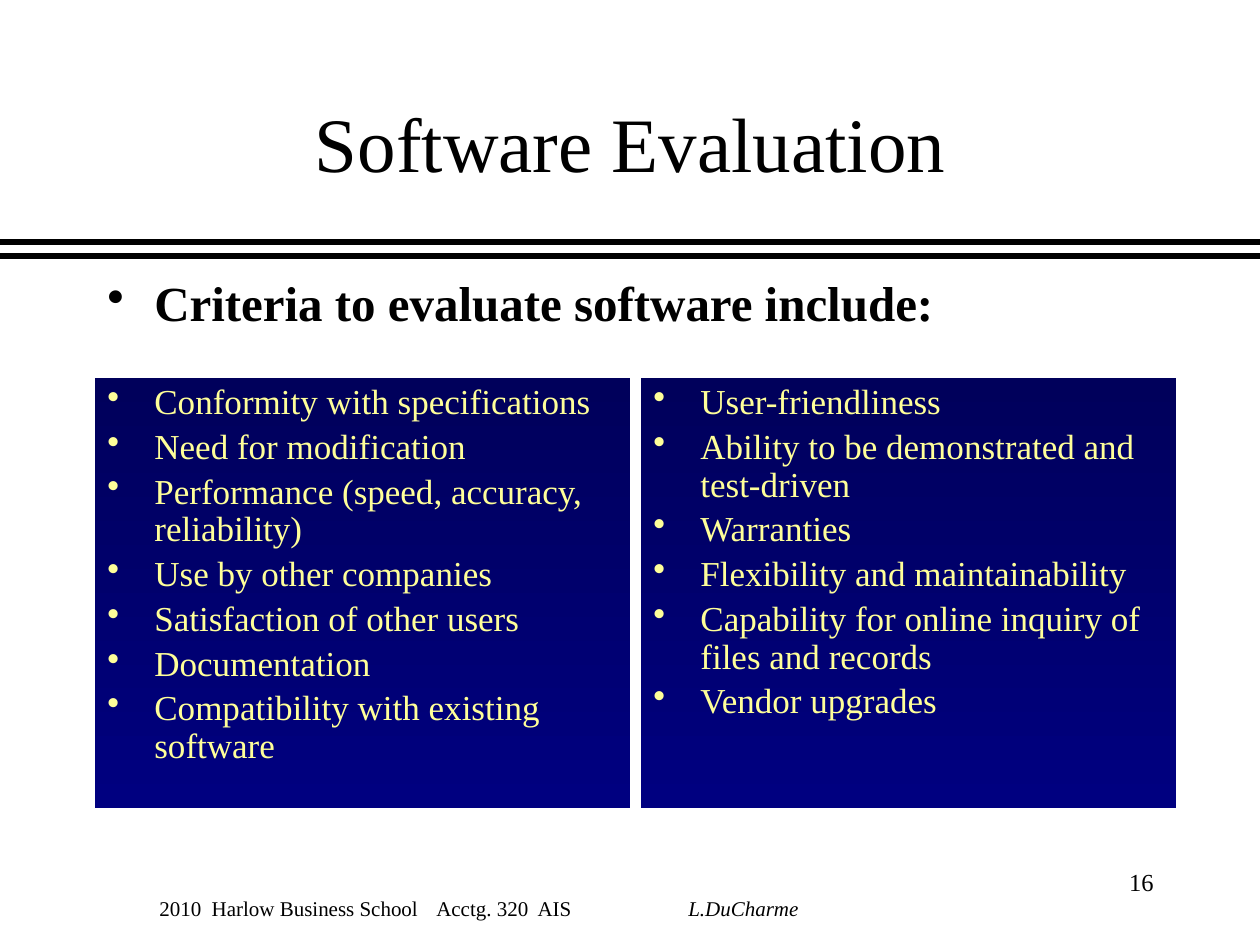
from lxml import etree
from pptx import Presentation, util as u
from pptx.dml import color
from pptx.enum import shapes, text
from pptx.oxml import ns

TITLE = "Software Evaluation"
LEAD = "Criteria to evaluate software include:"
CRITERIA = [
    [
        "Conformity with specifications",
        "Need for modification",
        "Performance (speed, accuracy, reliability)",
        "Use by other companies",
        "Satisfaction of other users",
        "Documentation",
        "Compatibility with existing software",
    ],
    [
        "User-friendliness",
        "Ability to be demonstrated and test-driven",
        "Warranties",
        "Flexibility and maintainability",
        "Capability for online inquiry of files and records",
        "Vendor upgrades",
    ],
]
FOOTER = ["2010  Harlow Business School", "Acctg. 320  AIS", "L.DuCharme"]
FOOTER_TABS = [277, 529]
PAGE_NUMBER = "16"
RULES = [(256, 3), (242, 3.5)]

COLORS = {"ink": "000000", "panel": "000080", "criteria": "FFFF99"}
FONT = "Times New Roman"
PANEL_LEFT, PANEL_TOP, PANEL_WIDTH, PANEL_HEIGHT = 95, 378, 535, 430
PANEL_STEP = 546
INDENT = 47


def px(n):
    return u.Emu(int(n * 914400 / 126))


def rgb(name):
    return color.RGBColor.from_string(COLORS[name])


def write(shape, lines, size, ink="ink", align=text.PP_ALIGN.LEFT,
          anchor=text.MSO_ANCHOR.TOP, bold=False, bullet=False):
    frame = shape.text_frame
    frame.word_wrap = True
    frame.vertical_anchor = anchor
    frame.text = "\n".join(lines)
    for line in frame.paragraphs:
        line.alignment = align
        for run in line.runs:
            run.font.name = FONT
            run.font.size = u.Pt(size)
            run.font.bold = bold
            run.font.color.rgb = rgb(ink)
        if bullet:
            line.line_spacing = 0.9
            line.space_before = u.Pt(size * 0.2)
            props = line._p.get_or_add_pPr()
            props.set("marL", str(px(INDENT)))
            props.set("indent", str(-px(INDENT)))
            etree.SubElement(props, ns.qn("a:buChar"), char="•")
    return frame


def add_text(slide, box, lines, size, **style):
    shape = slide.shapes.add_textbox(*map(px, box))
    return write(shape, lines, size, **style)


def add_rule(slide, y, weight):
    rule = slide.shapes.add_connector(
        shapes.MSO_CONNECTOR.STRAIGHT, 0, px(y), px(1260), px(y))
    rule.line.color.rgb = rgb("ink")
    rule.line.width = u.Pt(weight)
    etree.SubElement(rule._element.spPr, ns.qn("a:effectLst"))


def add_panel(slide, column, criteria):
    box = (PANEL_LEFT + column * PANEL_STEP, PANEL_TOP, PANEL_WIDTH, PANEL_HEIGHT)
    panel = slide.shapes.add_shape(shapes.MSO_SHAPE.RECTANGLE, *map(px, box))
    panel.shadow.inherit = False
    panel.line.fill.background()
    panel.fill.gradient()
    panel.fill.gradient_angle = 270
    for stop in panel.fill.gradient_stops:
        stop.color.rgb = rgb("panel")
    top_color = next(panel._element.spPr.iter(ns.qn("a:srgbClr")))
    etree.SubElement(top_color, ns.qn("a:shade"), val="46275")
    write(panel, criteria, 20, ink="criteria", bullet=True)


def add_footer(slide):
    frame = add_text(slide, (147, 864, 756, 63), ["\t".join(FOOTER[:2]) + "\t"],
                     12, anchor=text.MSO_ANCHOR.BOTTOM)
    line = frame.paragraphs[0]
    author = line.add_run()
    author.text = FOOTER[2]
    author.font.name = FONT
    author.font.size = u.Pt(12)
    author.font.italic = True
    author.font.color.rgb = rgb("ink")
    tabs = etree.SubElement(line._p.get_or_add_pPr(), ns.qn("a:tabLst"))
    for stop in FOOTER_TABS:
        etree.SubElement(tabs, ns.qn("a:tab"), pos=str(px(stop)), algn="l")


def main():
    deck = Presentation()
    deck.slide_width, deck.slide_height = px(1260), px(945)
    slide = deck.slides.add_slide(deck.slide_layouts[6])
    for y, weight in RULES:
        add_rule(slide, y, weight)
    add_footer(slide)
    add_text(slide, (95, 63, 1071, 158), [TITLE], 44,
             align=text.PP_ALIGN.CENTER, anchor=text.MSO_ANCHOR.MIDDLE)
    add_text(slide, (1061, 861, 105, 63), [PAGE_NUMBER], 14,
             align=text.PP_ALIGN.RIGHT)
    add_text(slide, (95, 273, 1071, 567), [LEAD], 28, bold=True, bullet=True)
    for column, criteria in enumerate(CRITERIA):
        add_panel(slide, column, criteria)
    deck.save("out.pptx")


if __name__ == "__main__":
    main()
